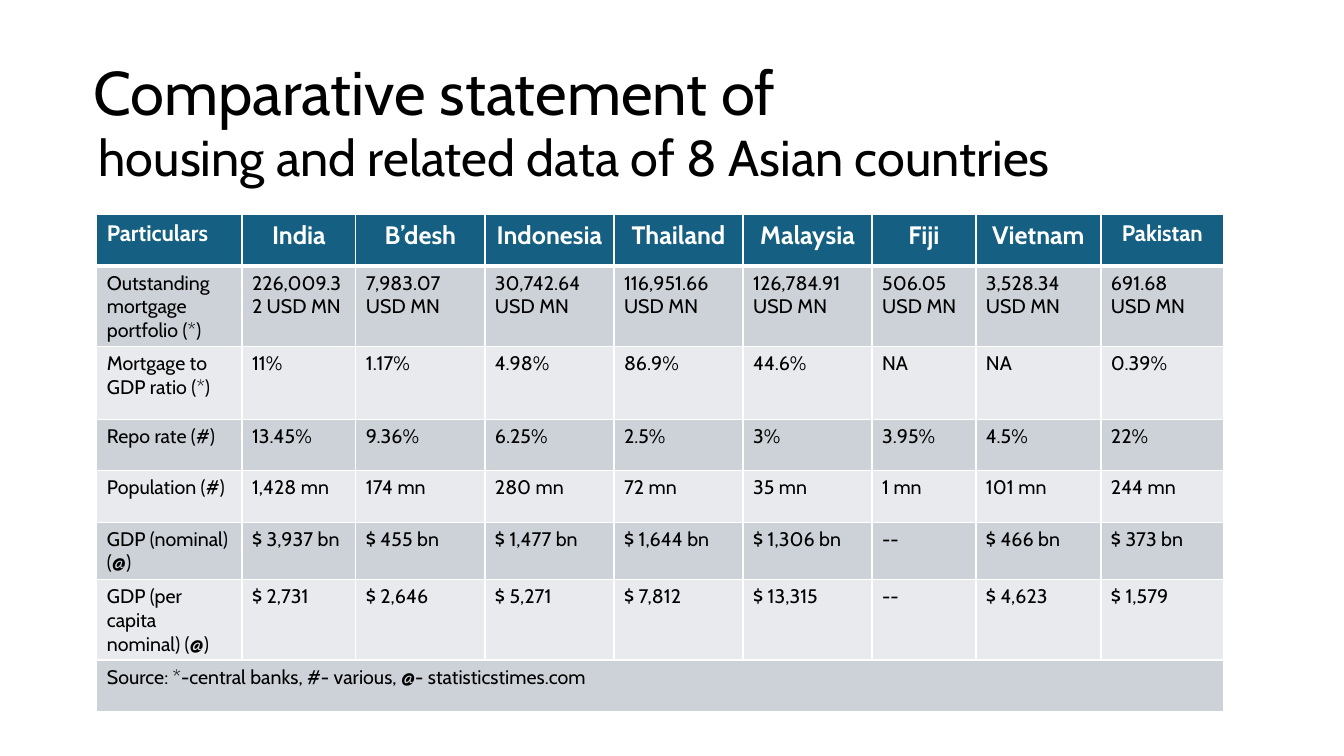
import pptx
import pptx.dml.color
import pptx.enum.text
import pptx.oxml
import pptx.oxml.ns
import pptx.util

RGBColor = pptx.dml.color.RGBColor
BLACK = RGBColor(0x00, 0x00, 0x00)
WHITE = RGBColor(0xFF, 0xFF, 0xFF)
HEADER_BLUE = RGBColor(0x15, 0x60, 0x82)
BAND_DARK = RGBColor(0xCC, 0xD2, 0xD8)
BAND_LIGHT = RGBColor(0xE8, 0xEA, 0xED)

Inches = pptx.util.Inches
PP_ALIGN = pptx.enum.text.PP_ALIGN

COLUMN_WIDTHS = [1.44, 1.13, 1.28, 1.28, 1.28, 1.28, 1.03, 1.24, 1.22]
ROW_HEIGHTS = [0.51, 0.77, 0.72, 0.51, 0.51, 0.51, 0.51, 0.51]
ROWS = [
    ["Particulars", "India", "B’desh", "Indonesia", "Thailand", "Malaysia",
     "Fiji", "Vietnam", "Pakistan"],
    ["Outstanding mortgage portfolio (*)", "226,009.32 USD MN", "7,983.07\nUSD MN",
     "30,742.64 USD MN", "116,951.66 USD MN", "126,784.91 USD MN",
     "506.05\nUSD MN", "3,528.34\nUSD MN", "691.68\nUSD MN"],
    ["Mortgage to GDP ratio (*)", "11%", "1.17%", "4.98%", "86.9%", "44.6%",
     "NA", "NA", "0.39%"],
    ["Repo rate (#)", "13.45%", "9.36%", "6.25%", "2.5%", "3%", "3.95%", "4.5%", "22%"],
    ["Population (#)", "1,428 mn", "174 mn", "280 mn", "72 mn", "35 mn", "1 mn",
     "101 mn", "244 mn"],
    ["GDP (nominal) (@)", "$ 3,937 bn", "$ 455 bn", "$ 1,477 bn", "$ 1,644 bn",
     "$ 1,306 bn", "--", "$ 466 bn", "$ 373 bn"],
    ["GDP (per capita nominal) (@)", "$ 2,731", "$ 2,646", "$ 5,271", "$ 7,812",
     "$ 13,315", "--", "$ 4,623", "$ 1,579"],
    ["Source: *-central banks, #- various, @- statisticstimes.com"] + [""] * 8,
]


def add_run(paragraph, text, size, color, bold=False):
    run = paragraph.add_run()
    run.text = text
    run.font.name = "Cabin"
    run.font.size = pptx.util.Pt(size)
    run.font.bold = bold
    run.font.color.rgb = color


def fill_and_border(cell, color, widths):
    """Fill the cell and draw white borders; widths maps an edge tag to points."""
    properties = cell._tc.get_or_add_tcPr()
    for edge, width in widths.items():
        properties.append(pptx.oxml.parse_xml(
            f'<a:{edge} {pptx.oxml.ns.nsdecls("a")} w="{pptx.util.Pt(width)}">'
            f'<a:solidFill><a:srgbClr val="{WHITE}"/></a:solidFill></a:{edge}>'))
    cell.fill.solid()
    cell.fill.fore_color.rgb = color


presentation = pptx.Presentation()
presentation.slide_width = Inches(13.33)
presentation.slide_height = Inches(7.5)
slide = presentation.slides.add_slide(presentation.slide_layouts[6])

for left, top, text, size in [
    (0.83, 0.4, "Comparative statement of", 44),
    (0.88, 1.04, "housing and related data of 8 Asian countries", 36),
]:
    heading = slide.shapes.add_textbox(Inches(left), Inches(top), Inches(11.5), Inches(1.09))
    heading.text_frame.word_wrap = True
    heading.text_frame.vertical_anchor = pptx.enum.text.MSO_ANCHOR.MIDDLE
    paragraph = heading.text_frame.paragraphs[0]
    paragraph.line_spacing = 0.9
    add_run(paragraph, text, size, BLACK)

table = slide.shapes.add_table(
    len(ROWS), len(COLUMN_WIDTHS), Inches(0.96), Inches(2.13),
    Inches(sum(COLUMN_WIDTHS)), Inches(sum(ROW_HEIGHTS))).table
for column, width in zip(table.columns, COLUMN_WIDTHS):
    column.width = Inches(width)
for row, height in zip(table.rows, ROW_HEIGHTS):
    row.height = Inches(height)

source_row = len(ROWS) - 1
table.cell(source_row, 0).merge(table.cell(source_row, len(COLUMN_WIDTHS) - 1))

for row_index, row in enumerate(ROWS):
    is_header = row_index == 0
    if is_header:
        fill_color = HEADER_BLUE
    else:
        fill_color = BAND_DARK if row_index % 2 else BAND_LIGHT
    border_widths = {"lnL": 1, "lnR": 1,
                     "lnT": 3 if row_index == 1 else 1,
                     "lnB": 3 if is_header else 1}
    for column_index, text in enumerate(row):
        cell = table.cell(row_index, column_index)
        fill_and_border(cell, fill_color, border_widths)
        if not text:
            continue
        for line_index, line in enumerate(text.split("\n")):
            frame = cell.text_frame
            paragraph = frame.add_paragraph() if line_index else frame.paragraphs[0]
            if is_header:
                paragraph.alignment = PP_ALIGN.CENTER if column_index else PP_ALIGN.LEFT
                size = 16 if text in ("Particulars", "Pakistan") else 18
                add_run(paragraph, line, size, WHITE, bold=True)
            else:
                add_run(paragraph, line, 14, BLACK)

presentation.save("out.pptx")
